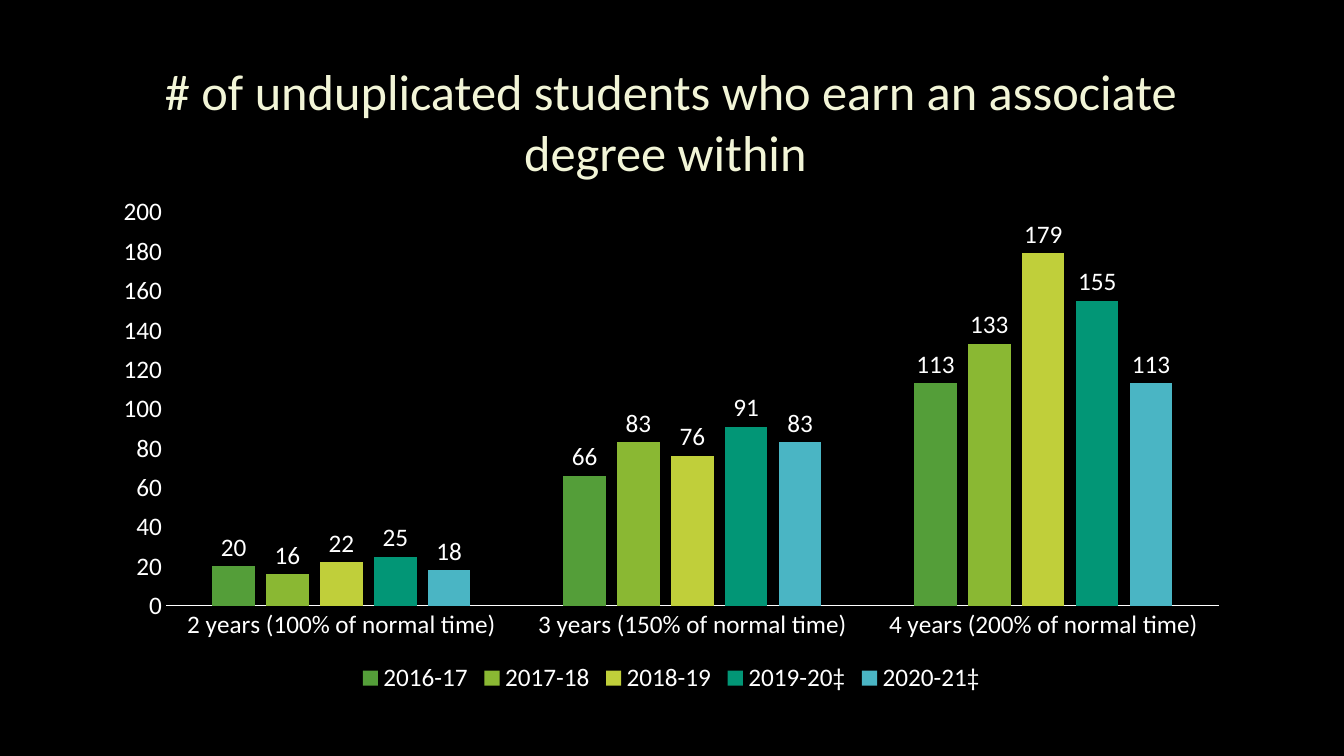
from dataclasses import dataclass

from pptx import Presentation
from pptx.chart.data import CategoryChartData
from pptx.dml.color import RGBColor
from pptx.enum.chart import XL_CHART_TYPE, XL_LABEL_POSITION, XL_LEGEND_POSITION, XL_TICK_MARK
from pptx.enum.text import MSO_ANCHOR, PP_ALIGN
from pptx.util import Cm, Pt

CLUSTERED = XL_CHART_TYPE.COLUMN_CLUSTERED
OUTSIDE_END = XL_LABEL_POSITION.OUTSIDE_END
LEGEND_BOTTOM = XL_LEGEND_POSITION.BOTTOM
NO_TICK = XL_TICK_MARK.NONE
MIDDLE = MSO_ANCHOR.MIDDLE
CENTER = PP_ALIGN.CENTER

LEFT, WIDTH = 2.54, 28.75
TIME_SPANS = [
    "2 years (100% of normal time)",
    "3 years (150% of normal time)",
    "4 years (200% of normal time)",
]
GRADUATES = {
    "2016-17": (20, 66, 113),
    "2017-18": (16, 83, 133),
    "2018-19": (22, 76, 179),
    "2019-20‡": (25, 91, 155),
    "2020-21‡": (18, 83, 113),
}


@dataclass(frozen=True)
class Theme:
    font: str = "Calibri"
    background: str = "000000"
    heading: str = "F2F5D7"
    body: str = "FFFFFF"
    years: tuple = ("549E39", "8AB833", "C0CF3A", "029676", "4AB5C4")
    heading_size: int = 36
    body_size: int = 18


class SlideBuilder:
    def __init__(self, slide, theme):
        self.slide = slide
        self.theme = theme

    def paint(self, fill, color):
        fill.solid()
        fill.fore_color.rgb = RGBColor.from_string(color)

    def style(self, font, size, color):
        font.name = self.theme.font
        font.size = Pt(size)
        font.color.rgb = RGBColor.from_string(color)

    def background(self):
        self.paint(self.slide.background.fill, self.theme.background)

    def title(self, wording, left, top, width, height):
        heading = self.slide.shapes.add_textbox(Cm(left), Cm(top), Cm(width), Cm(height))
        frame = heading.text_frame
        frame.word_wrap = True
        frame.vertical_anchor = MIDDLE
        frame.text = wording
        frame.paragraphs[0].alignment = CENTER
        self.style(frame.paragraphs[0].runs[0].font, self.theme.heading_size, self.theme.heading)

    def column_chart(self, categories, series, left, top, width, height):
        theme = self.theme
        numbers = CategoryChartData()
        numbers.categories = categories
        for name, values in series.items():
            numbers.add_series(name, values)
        chart = self.slide.shapes.add_chart(
            CLUSTERED, Cm(left), Cm(top), Cm(width), Cm(height), numbers
        ).chart
        chart.has_title = False
        chart.has_legend = True
        chart.legend.position = LEGEND_BOTTOM
        chart.legend.include_in_layout = False

        time_axis, count_axis = chart.category_axis, chart.value_axis
        for axis in (time_axis, count_axis):
            axis.has_major_gridlines = False
            axis.major_tick_mark = axis.minor_tick_mark = NO_TICK
        time_axis.format.line.width = Pt(0.75)
        self.paint(time_axis.format.line.fill, theme.body)
        count_axis.format.line.fill.background()
        count_axis.minimum_scale, count_axis.maximum_scale = 0, 200
        count_axis.major_unit = 20

        plot = chart.plots[0]
        plot.gap_width = 219
        plot.overlap = -27
        plot.vary_by_categories = False
        plot.has_data_labels = True
        labels = plot.data_labels
        labels.show_value = True
        labels.position = OUTSIDE_END
        for part in (chart, chart.legend, time_axis.tick_labels, count_axis.tick_labels, labels):
            self.style(part.font, theme.body_size, theme.body)
        for year, color in zip(plot.series, theme.years):
            self.paint(year.format.fill, color)


def main():
    deck = Presentation()
    deck.slide_width, deck.slide_height = Cm(33.87), Cm(19.05)
    builder = SlideBuilder(deck.slides.add_slide(deck.slide_layouts[6]), Theme())
    builder.background()
    builder.title(
        "# of unduplicated students who earn an associate degree within ",
        LEFT, 1.7, WIDTH, 2.7,
    )
    builder.column_chart(TIME_SPANS, GRADUATES, LEFT, 4.7, WIDTH, 12.9)
    deck.save("out.pptx")


if __name__ == "__main__":
    main()
